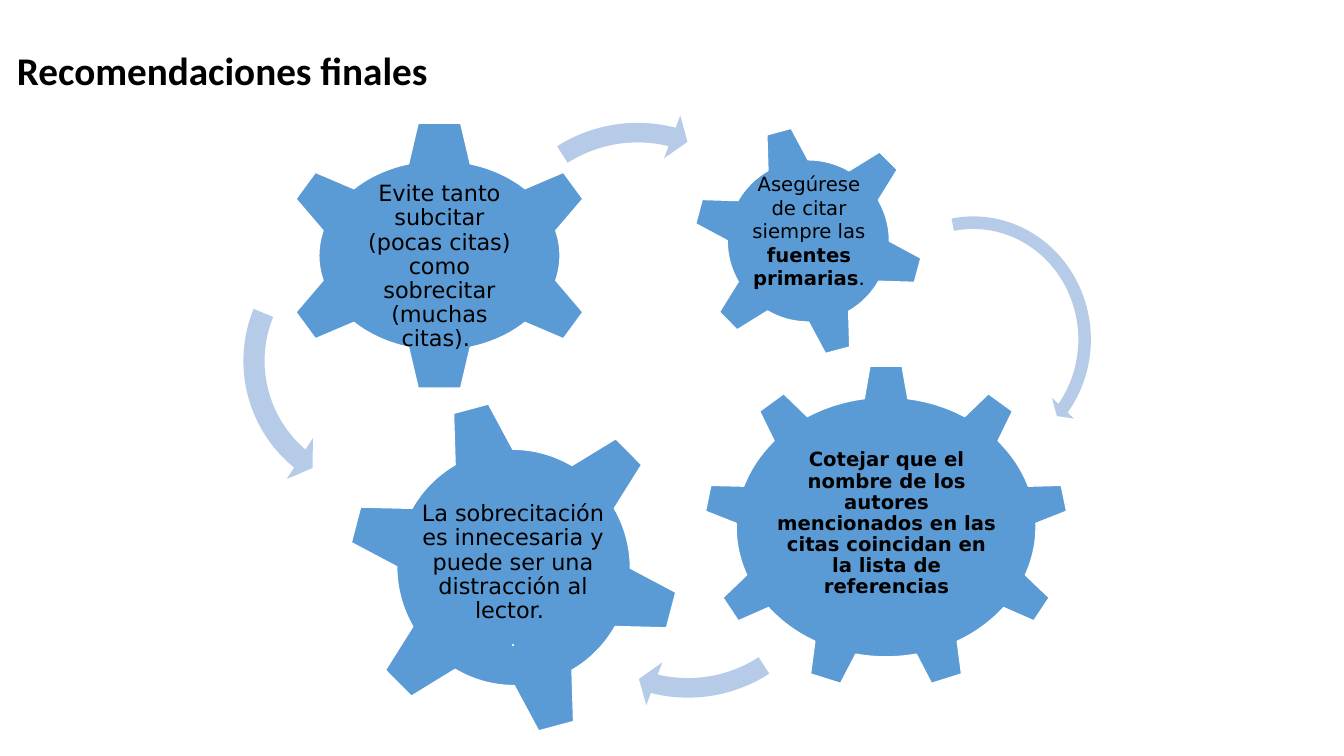
from pptx import Presentation
from pptx.dml.color import RGBColor
from pptx.enum.shapes import MSO_SHAPE as SHAPE
from pptx.enum.text import MSO_ANCHOR as ANCHOR, MSO_AUTO_SIZE as AUTO_SIZE, PP_ALIGN as ALIGN
from pptx.util import Pt

BLUE = RGBColor(0x5B, 0x9B, 0xD5)
PALE_BLUE = RGBColor(0xB5, 0xCB, 0xE7)
WHITE = RGBColor(0xFF, 0xFF, 0xFF)
BLACK = RGBColor(0, 0, 0)
INSET = 1.5

presentation = Presentation()
presentation.slide_width, presentation.slide_height = Pt(960), Pt(540)
slide = presentation.slides.add_slide(presentation.slide_layouts[6])


def add_filled_shape(kind, box, rotation, color):
    shape = slide.shapes.add_shape(kind, *map(Pt, box))
    shape.rotation = rotation
    shape.shadow.inherit = False
    shape.fill.solid()
    shape.fill.fore_color.rgb = color
    return shape


def add_text(box, paragraphs, top=INSET, bottom=INSET):
    """Each paragraph is (size, font, color, line spacing, runs); a run is (text, bold)."""
    frame = slide.shapes.add_textbox(*map(Pt, box)).text_frame
    frame.word_wrap = True
    frame.vertical_anchor = ANCHOR.MIDDLE
    frame.margin_left = frame.margin_right = Pt(INSET)
    frame.margin_top, frame.margin_bottom = Pt(top), Pt(bottom)
    for index, (size, font, color, spacing, runs) in enumerate(paragraphs):
        paragraph = frame.add_paragraph() if index else frame.paragraphs[0]
        paragraph.alignment = ALIGN.CENTER
        paragraph.line_spacing = spacing
        if index < len(paragraphs) - 1:
            paragraph.space_after = Pt(0.35 * size)
        paragraph.font.size = Pt(size)
        paragraph.font.name = font
        paragraph.font.color.rgb = color
        for text, bold in runs:
            run = paragraph.add_run()
            run.text = text
            run.font.bold = bold


# Gears: kind, box, rotation, text box, paragraphs, top and bottom inset
BODY = "DejaVu Sans"
gears = [
    (SHAPE.GEAR_9, (502.6, 260.6, 260.6, 231.8), 0, (553, 314.6, 160.6, 119.5),
     [(14, BODY, BLACK, 0.9, [("Cotejar que el nombre de los autores mencionados en las "
                               "citas coincidan en la lista de referencias", True)])],
     INSET, INSET),
    (SHAPE.GEAR_6, (198.7, 85.7, 230.4, 193.7), 0, (252.7, 134.6, 122.4, 95.8),
     [(16, BODY, BLACK, 0.9, [("Evite tanto subcitar (pocas citas) como sobrecitar "
                               "(muchas citas). ", False)])],
     18, INSET),
    (SHAPE.GEAR_6, (494.6, 89.3, 165.6, 165.6), 345, (531.4, 125.3, 92.9, 92.9),
     [(14, BODY, BLACK, 1.0, [("Asegúrese de citar siempre las ", False),
                              ("fuentes primarias", True), (".", False)])],
     INSET, 15),
    (SHAPE.GEAR_6, (247.7, 285.1, 238.3, 240.5), 345, (298.1, 349.2, 136.8, 107.3),
     [(16, BODY, BLACK, 0.9, [("La sobrecitación es innecesaria y puede ser una "
                               "distracción al lector. ", False)]),
      (13, "Calibri", WHITE, 0.9, [(".", False)])],
     19.5, INSET),
]
for kind, box, rotation, text_box, paragraphs, top, bottom in gears:
    gear = add_filled_shape(kind, box, rotation, BLUE)
    gear.line.color.rgb = WHITE
    gear.line.width = Pt(1)
    add_text(text_box, paragraphs, top, bottom)

# Arrows that lead from gear to gear
SHORT_ARC = (0.06, 3.94, 133.14, 105.08, 0.07)
arrows = [
    (SHAPE.CIRCULAR_ARROW, (606.2, 148.3, 179.3, 187.2), 355.8,
     (0.05, 2.99, 25.38, 158.14, 0.06)),
    (SHAPE.LEFT_CIRCULAR_ARROW, (164.2, 149.8, 216, 216), 314.9,
     (0.07, 4.3, 104.89, 148.38, 0.08)),
    (SHAPE.CIRCULAR_ARROW, (339.1, 78.5, 232.6, 232.6), 62.4, SHORT_ARC),
    (SHAPE.CIRCULAR_ARROW, (375.1, 275, 232.6, 232.6), 242, SHORT_ARC),
]
for kind, box, rotation, adjustments in arrows:
    arrow = add_filled_shape(kind, box, rotation, PALE_BLUE)
    arrow.line.fill.background()
    for index, value in enumerate(adjustments):
        arrow.adjustments[index] = value

# Title
title = slide.shapes.add_textbox(Pt(5), Pt(29.5), Pt(311), Pt(41)).text_frame
title.word_wrap = False
title.auto_size = AUTO_SIZE.SHAPE_TO_FIT_TEXT
paragraph = title.paragraphs[0]
paragraph.text = "Recomendaciones finales"
paragraph.font.size = Pt(28)
paragraph.font.name = "Calibri"
paragraph.font.bold = True
paragraph.font.color.rgb = BLACK

presentation.save("out.pptx")
